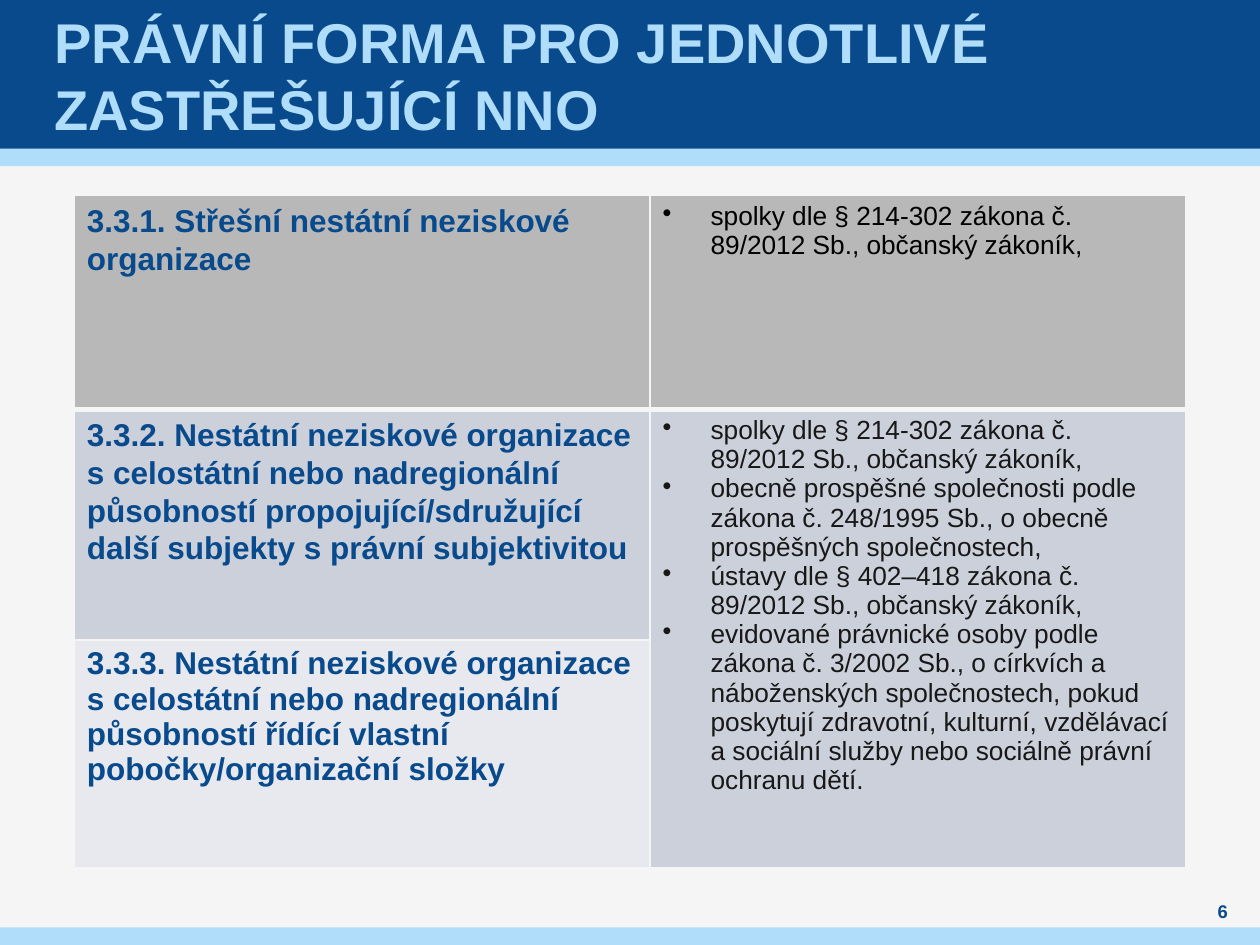
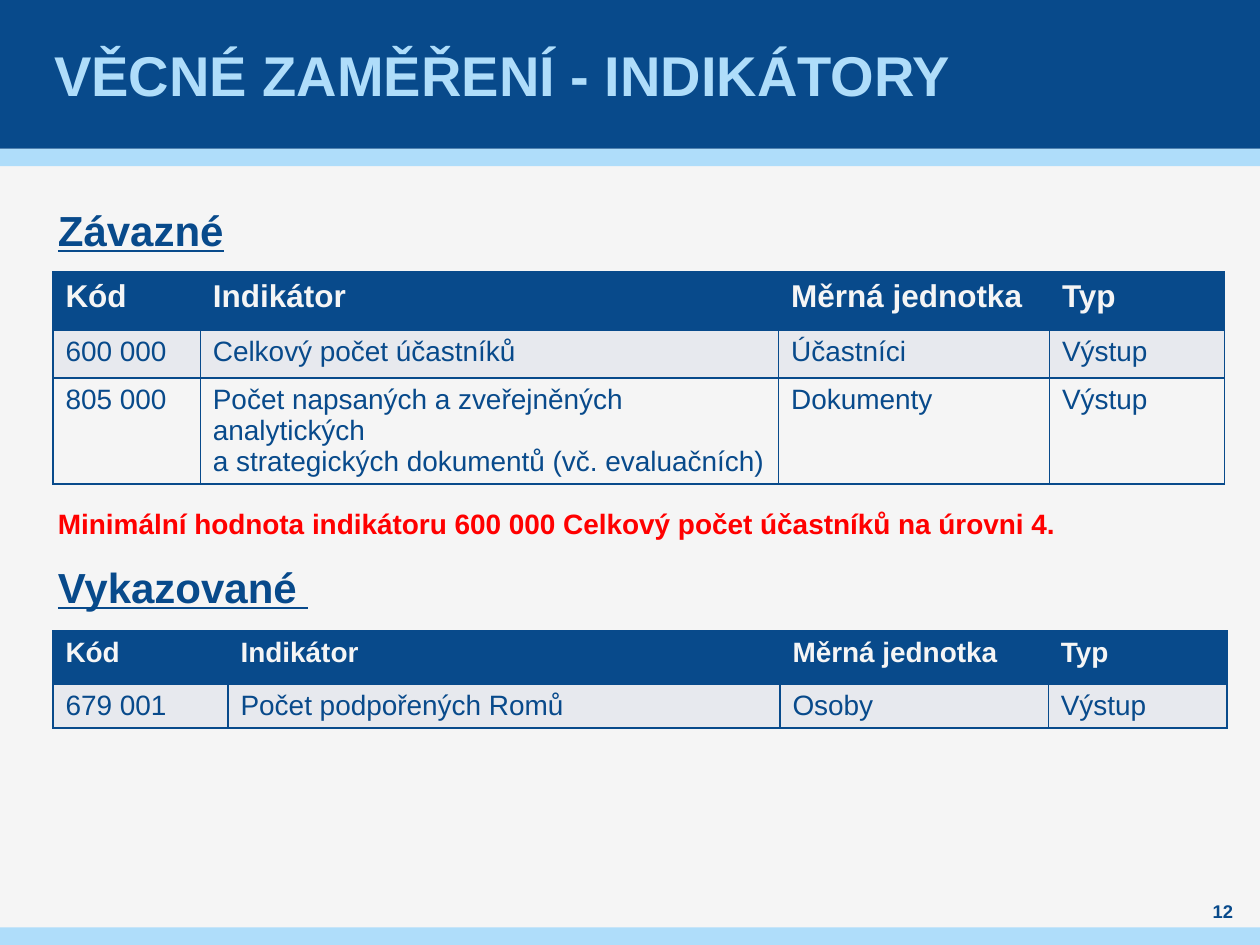
from dataclasses import dataclass

import lxml.etree
import pptx
import pptx.dml.color
import pptx.enum.shapes
import pptx.enum.text
import pptx.oxml.ns
import pptx.util

RGBColor = pptx.dml.color.RGBColor
ALIGN = pptx.enum.text.PP_ALIGN
ANCHOR = pptx.enum.text.MSO_ANCHOR

NAVY = RGBColor(0x08, 0x4A, 0x8B)
SKY = RGBColor(0xAF, 0xDD, 0xFA)
PAPER = RGBColor(0xF5, 0xF5, 0xF5)
GREY = RGBColor(0xB8, 0xB8, 0xB8)
BLUE_GREY = RGBColor(0xCC, 0xD0, 0xDA)
PALE = RGBColor(0xE7, 0xE9, 0xEE)
BLACK = RGBColor(0, 0, 0)
INK = RGBColor(0x18, 0x18, 0x18)
RED = RGBColor(0xFF, 0, 0)

FONT = "Arial"
COLUMNS, ROWS = 100, 75
WIDTH, HEIGHT = pptx.util.Inches(10), pptx.util.Inches(7.5)
LINE_FACTOR = 1.2
HEADING_SIZE = 24
HEADING_LINE = HEADING_SIZE * LINE_FACTOR
PARAGRAPH_GAP = 6
TABLE_ROOM = 3 * (HEADING_LINE + 2 * PARAGRAPH_GAP)


def across(columns):
    return round(WIDTH * columns / COLUMNS)


def down(rows):
    return round(HEIGHT * rows / ROWS)


@dataclass
class Box:
    left: float
    top: float
    width: float
    height: float

    def frame(self):
        return across(self.left), down(self.top), across(self.width), down(self.height)


HEADER = Box(0, 0, COLUMNS, 11.8)
HEADER_STRIPE = Box(0, 11.8, COLUMNS, 1.4)
FOOTER_STRIPE = Box(0, 73.6, COLUMNS, 1.4)
TITLE = Box(3.9, 0, 92.1, 11.8)
PAGE_NUMBER = Box(94.5, 71.3, 5.1, 2)
FORMS = Box(5.9, 15.5, 88.2, 53.4)
INDICATORS = Box(4.2, 16.2, 93.1, 47.2)


def place(shape, box):
    shape.left, shape.top, shape.width, shape.height = box.frame()


def set_margins(frame, side=0):
    frame.margin_left = frame.margin_right = across(side)
    frame.margin_top = frame.margin_bottom = 0
    frame.word_wrap = True
    frame.auto_size = pptx.enum.text.MSO_AUTO_SIZE.NONE


def add_text(paragraph, text, size, color, bold=False, underline=False):
    for index, line in enumerate(text.split("\n")):
        if index:
            paragraph.add_line_break()
        run = paragraph.add_run()
        run.text = line
        font = run.font
        font.name, font.size, font.bold, font.underline = FONT, pptx.util.Pt(size), bold, underline
        font.color.rgb = color


def set_bullet(paragraph, symbol=None, indent=0):
    properties = paragraph._p.get_or_add_pPr()
    properties.set("marL", str(across(indent)))
    properties.set("indent", str(-across(indent)))
    name = "a:buChar" if symbol else "a:buNone"
    bullet = lxml.etree.SubElement(properties, pptx.oxml.ns.qn(name))
    if symbol:
        bullet.set("char", symbol)


def paragraphs_for(frame, items):
    for index, item in enumerate(items):
        yield (frame.add_paragraph() if index else frame.paragraphs[0]), item


def set_borders(cell, color, widths):
    properties = cell._tc.get_or_add_tcPr()
    for side, width in zip("LRTB", widths):
        line = lxml.etree.SubElement(properties, pptx.oxml.ns.qn(f"a:ln{side}"))
        line.set("w", str(pptx.util.Pt(width)))
        fill = lxml.etree.SubElement(line, pptx.oxml.ns.qn("a:solidFill"))
        lxml.etree.SubElement(fill, pptx.oxml.ns.qn("a:srgbClr")).set("val", str(color))


def fill_cell(cell, color):
    cell.fill.solid()
    cell.fill.fore_color.rgb = color


def add_table(slide, box, columns, rows):
    table = slide.shapes.add_table(len(rows), len(columns), *box.frame()).table
    table.first_row = table.horz_banding = False
    for column, width in zip(table.columns, columns):
        column.width = across(width)
    for row, height in zip(table.rows, rows):
        row.height = down(height)
    return table


def build_master(presentation, slide):
    master = presentation.slide_master
    master.background.fill.solid()
    master.background.fill.fore_color.rgb = PAPER
    bands = ((HEADER_STRIPE, SKY), (HEADER, NAVY), (FOOTER_STRIPE, SKY))
    for position, (box, color) in enumerate(bands, start=2):
        band = slide.shapes.add_shape(pptx.enum.shapes.MSO_SHAPE.RECTANGLE, *box.frame())
        band.shadow.inherit = False
        band.fill.solid()
        band.fill.fore_color.rgb = color
        band.line.fill.background()
        master.shapes._spTree.insert(position, band._element)


def add_title(slide, text):
    title = slide.shapes.title
    place(title, TITLE)
    frame = title.text_frame
    set_margins(frame, 0.4)
    frame.vertical_anchor = ANCHOR.MIDDLE
    paragraph = frame.paragraphs[0]
    paragraph.alignment = ALIGN.LEFT
    paragraph.line_spacing = pptx.util.Pt(32 * LINE_FACTOR)
    add_text(paragraph, text, 32, SKY, bold=True)


def add_page_number(slide, number):
    frame = slide.shapes.add_textbox(*PAGE_NUMBER.frame()).text_frame
    set_margins(frame)
    frame.vertical_anchor = ANCHOR.MIDDLE
    frame.paragraphs[0].alignment = ALIGN.CENTER
    add_text(frame.paragraphs[0], str(number), 10.5, NAVY, bold=True)


def add_slide(presentation, layout, title, number):
    slide = presentation.slides.add_slide(presentation.slide_layouts.get_by_name(layout))
    add_title(slide, title)
    add_page_number(slide, number)
    return slide


def add_legal_list(cell, items, color):
    for paragraph, item in paragraphs_for(cell.text_frame, items):
        set_bullet(paragraph, "•", 3.8)
        add_text(paragraph, item, 15, color)


def add_forms_table(slide, box):
    associations = "spolky dle § 214-302 zákona č. 89/2012 Sb., občanský zákoník,"
    legal_forms = [
        associations,
        "obecně prospěšné společnosti podle zákona č. 248/1995 Sb., o obecně prospěšných společnostech,",
        "ústavy dle § 402–418 zákona č. 89/2012 Sb., občanský zákoník,",
        "evidované právnické osoby podle zákona č. 3/2002 Sb., o církvích a náboženských společnostech, "
        "pokud poskytují zdravotní, kulturní, vzdělávací a sociální služby nebo sociálně právní ochranu dětí.",
    ]
    organisations = [
        ("3.3.1. Střešní nestátní neziskové organizace", 1.07, GREY, GREY),
        ("3.3.2. Nestátní neziskové organizace s celostátní nebo nadregionální působností "
         "propojující/sdružující další subjekty s právní subjektivitou", 1.07, BLUE_GREY, BLUE_GREY),
        ("3.3.3. Nestátní neziskové organizace s celostátní nebo nadregionální působností "
         "řídící vlastní pobočky/organizační složky", 1, PALE, BLUE_GREY),
    ]
    table = add_table(slide, box, (45.7, box.width - 45.7), (17, 18.3, 18.1))
    for row, (name, spacing, *fills) in enumerate(organisations):
        for column, fill in enumerate(fills):
            cell = table.cell(row, column)
            set_borders(cell, PAPER, (1, 1, 3 if row == 1 else 1, 3 if row == 0 else 1))
            fill_cell(cell, fill)
        paragraph = table.cell(row, 0).text_frame.paragraphs[0]
        paragraph.line_spacing = spacing
        add_text(paragraph, name, 18, NAVY, bold=True)
    table.cell(1, 1).merge(table.cell(2, 1))
    add_legal_list(table.cell(0, 1), [associations], BLACK)
    add_legal_list(table.cell(1, 1), legal_forms, INK)


def add_indicator_table(slide, box, columns, rows, header_size, records):
    table = add_table(slide, box, columns, rows)
    header = ("Kód", "Indikátor", "Měrná jednotka", "Typ")
    for row, record in enumerate([header, *records]):
        is_header = row == 0
        fill = NAVY if is_header else (PAPER, PALE)[row % 2]
        for column, text in enumerate(record):
            cell = table.cell(row, column)
            set_borders(cell, NAVY, (1, 1, 1, 1))
            fill_cell(cell, fill)
            size, color = (header_size, PAPER) if is_header else (16, NAVY)
            add_text(cell.text_frame.paragraphs[0], text, size, color, bold=is_header)


def add_indicator_headings(slide, box):
    body = slide.placeholders[1]
    place(body, Box(box.left + 0.4, box.top, 92.1, box.height))
    frame = body.text_frame
    set_margins(frame)
    frame.vertical_anchor = ANCHOR.TOP
    headings = [
        ("Závazné", HEADING_SIZE, NAVY, True, 0),
        ("Minimální hodnota indikátoru 600 000 Celkový počet účastníků na úrovni 4.",
         16, RED, False, PARAGRAPH_GAP + TABLE_ROOM),
        ("Vykazované ", HEADING_SIZE, NAVY, True, PARAGRAPH_GAP),
    ]
    for paragraph, (text, size, color, underline, before) in paragraphs_for(frame, headings):
        set_bullet(paragraph)
        paragraph.line_spacing = pptx.util.Pt(HEADING_LINE)
        paragraph.space_before = pptx.util.Pt(before)
        paragraph.space_after = pptx.util.Pt(PARAGRAPH_GAP)
        add_text(paragraph, text, size, color, bold=True, underline=underline)


def add_indicators(slide, box):
    add_indicator_headings(slide, box)
    add_indicator_table(
        slide, Box(box.left, box.top + 5.4, box.width, 16.8),
        (11.7, 45.9, 21.5, 13.9), (4.6, 3.8, 8.4), 18,
        [("600 000", "Celkový počet účastníků", "Účastníci", "Výstup"),
         ("805 000", "Počet napsaných a zveřejněných analytických \n"
          "a strategických dokumentů (vč. evaluačních)", "Dokumenty", "Výstup")])
    add_indicator_table(
        slide, Box(box.left, box.top + 33.9, box.width, 7.6),
        (13.9, 43.8, 21.3, 14.2), (4.2, 3.4), 16,
        [("679 001", "Počet podpořených Romů", "Osoby", "Výstup")])


def main():
    presentation = pptx.Presentation()
    presentation.slide_width, presentation.slide_height = WIDTH, HEIGHT
    forms = add_slide(presentation, "Title Only", "PRÁVNÍ FORMA PRO JEDNOTLIVÉ ZASTŘEŠUJÍCÍ NNO", 6)
    build_master(presentation, forms)
    add_forms_table(forms, FORMS)
    indicators = add_slide(presentation, "Title and Content", "VĚCNÉ ZAMĚŘENÍ - INDIKÁTORY", 12)
    add_indicators(indicators, INDICATORS)
    presentation.save("out.pptx")


if __name__ == "__main__":
    main()
